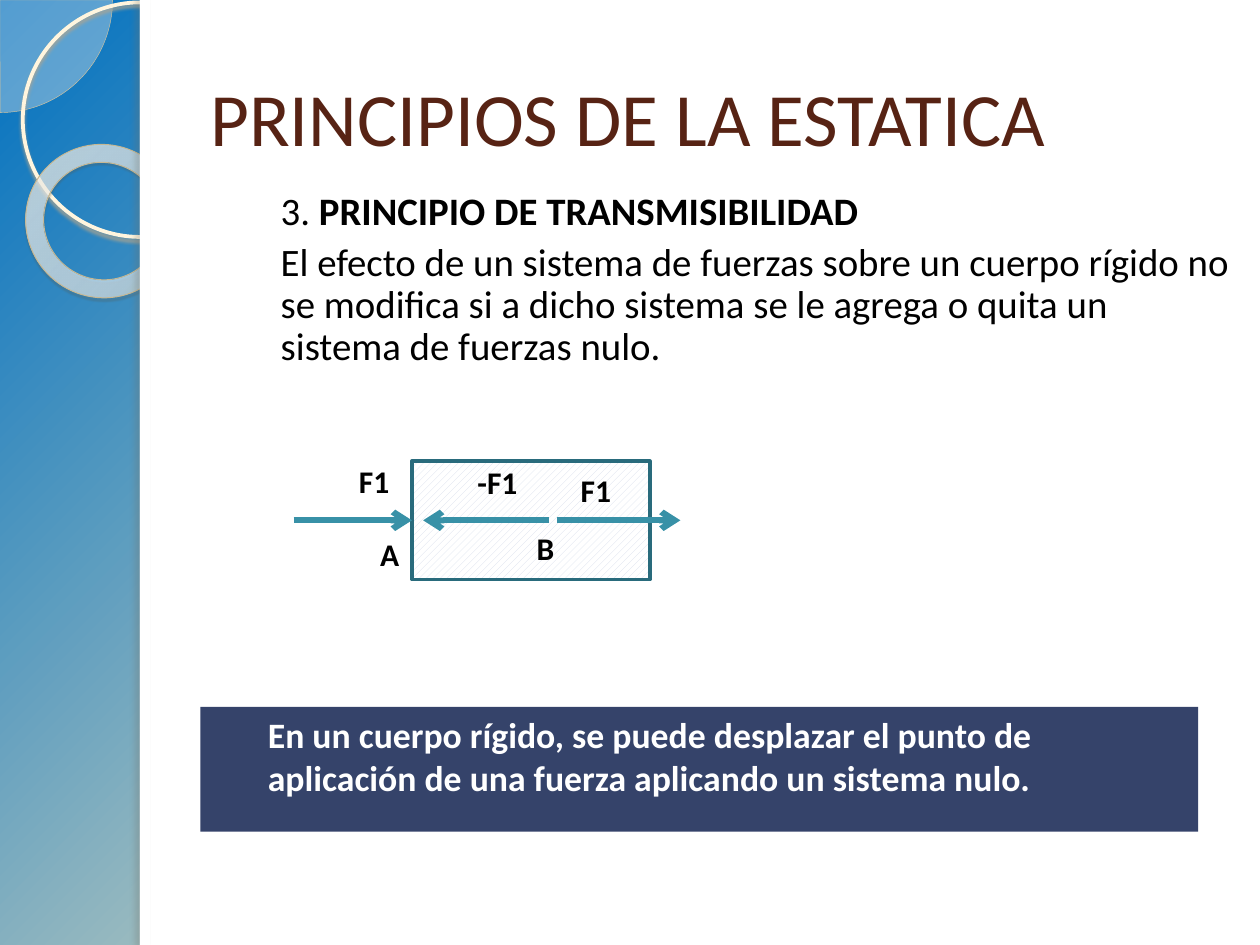
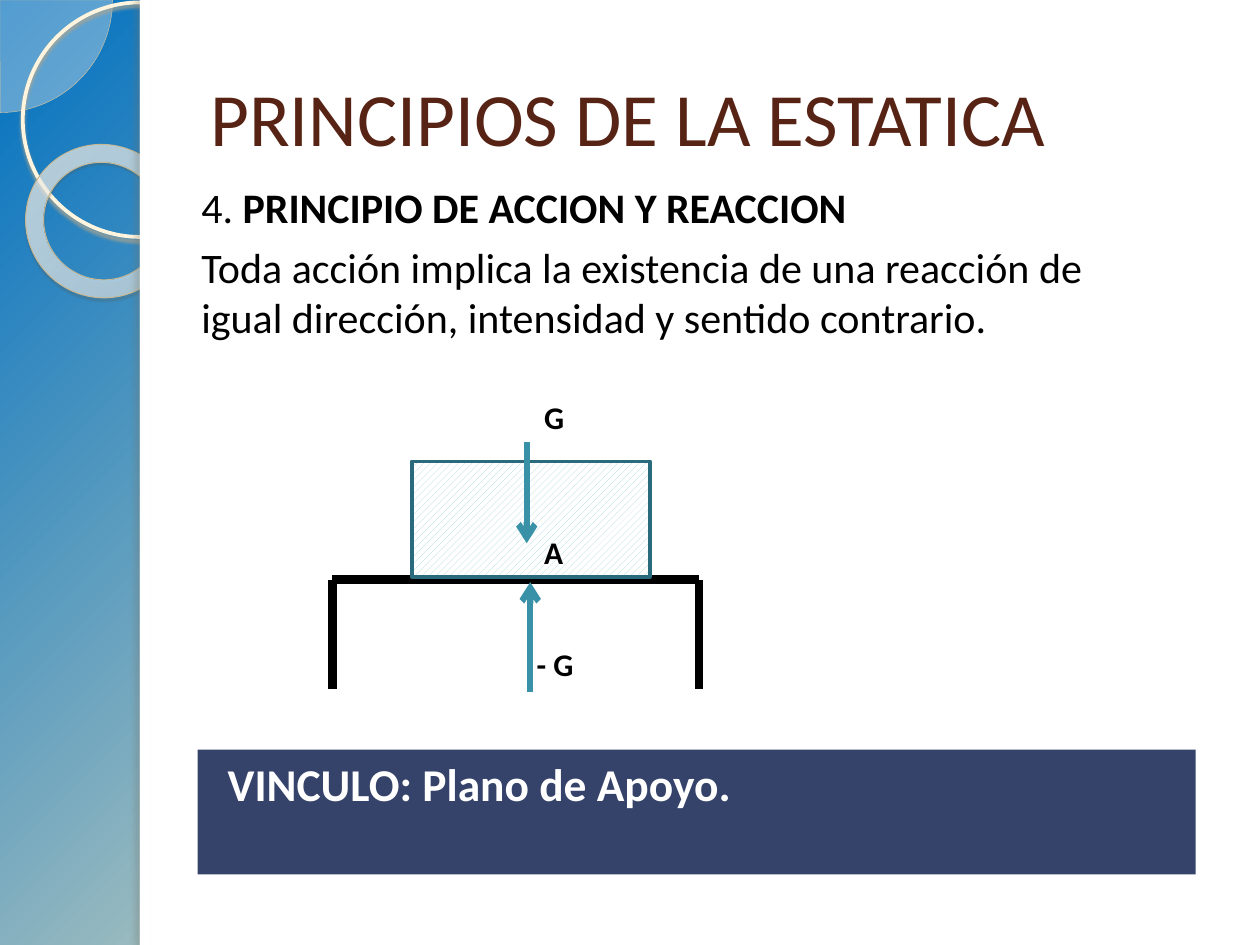
from dataclasses import dataclass

import pptx
import pptx.dml.color
import pptx.enum.dml
import pptx.enum.shapes
import pptx.enum.text
import pptx.oxml
import pptx.oxml.ns
import pptx.util
from lxml import etree

Pt = pptx.util.Pt
RGBColor = pptx.dml.color.RGBColor
PRESET = pptx.enum.shapes.MSO_SHAPE
ANCHOR = pptx.enum.text.MSO_ANCHOR
qn = pptx.oxml.ns.qn

FONT = "Calibri"
BLACK = RGBColor(0x00, 0x00, 0x00)
WHITE = RGBColor(0xFF, 0xFF, 0xFF)
TITLE_BROWN = RGBColor(0x57, 0x23, 0x14)
BANNER_NAVY = RGBColor(0x35, 0x43, 0x6A)
FORCE_TEAL = RGBColor(0x38, 0x91, 0xA7)
BLOCK_EDGE = RGBColor(0x29, 0x6B, 0x7C)
HATCH_GREY = RGBColor(0xD7, 0xDD, 0xEB)
HATCH_TEAL = RGBColor(0xA9, 0xD7, 0xE2)
PIE_CREAM = RGBColor(0xFE, 0xFA, 0xF4)
PIE_EDGE = RGBColor(0xD3, 0xC3, 0x9F)
RING_CREAM = RGBColor(0xFF, 0xF5, 0xDE)
RING_SHADOW = RGBColor(0xB0, 0xA6, 0x8F)
DONUT_EDGE = RGBColor(0xC7, 0xB8, 0x93)
DONUT_SHADOW = RGBColor(0x5A, 0x54, 0x44)
PANEL_SHADOW = RGBColor(0x73, 0x6F, 0x63)
# Gradient stops: position %, colour, opacity %
SKY_STOPS = [(0, RGBColor(0x00, 0x70, 0xC0), 100),
             (82, RGBColor(0xFF, 0xEB, 0xBE), 100),
             (100, RGBColor(0xC9, 0xB4, 0x84), 100)]
DONUT_STOPS = [(0, RGBColor(0xFF, 0xFC, 0xF6), 70),
               (70, RGBColor(0xFF, 0xFE, 0xFB), 55),
               (100, RGBColor(0xF0, 0xD2, 0x8E), 60)]

SLIDE_WIDTH, SLIDE_HEIGHT = 720, 540
PANEL_LEFT = 80
LIST_INDENT = 31.5


@dataclass
class Box:
    left: float
    top: float
    width: float
    height: float

    def inner(self, left, top, width, height):
        return Box(self.left + left, self.top + top, width, height)

    def lengths(self):
        return Pt(self.left), Pt(self.top), Pt(self.width), Pt(self.height)


def add_color(parent, color, opacity=100):
    node = etree.SubElement(parent, qn("a:srgbClr"), val=str(color))
    if opacity < 100:
        etree.SubElement(node, qn("a:alpha"), val=str(opacity * 1000))


def fill_radial(fill, owner, stops, focus):
    """Give the owner element a circular gradient around the focus rectangle (%)."""
    fill.gradient()
    gradient = next(owner.iter(qn("a:gradFill")))
    gradient.clear()
    gradient.set("rotWithShape", "1")
    stop_list = etree.SubElement(gradient, qn("a:gsLst"))
    for position, color, opacity in stops:
        stop = etree.SubElement(stop_list, qn("a:gs"), pos=str(position * 1000))
        add_color(stop, color, opacity)
    circle = etree.SubElement(gradient, qn("a:path"), attrib={"path": "circle"})
    edges = {side: str(value * 1000) for side, value in zip("ltrb", focus)}
    etree.SubElement(circle, qn("a:fillToRect"), attrib=edges)


def add_shadow(shape, color, opacity, blur, distance, angle):
    effects = shape.element.spPr.find(qn("a:effectLst"))
    shadow = etree.SubElement(
        effects, qn("a:outerShdw"), blurRad=str(Pt(blur)), dist=str(Pt(distance)),
        dir=str(angle * 60000), algn="tl", rotWithShape="0")
    add_color(shadow, color, opacity)


def add_plain_shape(page, preset, box, fill=None, edge=None, edge_width=1):
    shape = page.shapes.add_shape(preset, *box.lengths())
    shape.shadow.inherit = False
    if fill is None:
        shape.fill.background()
    else:
        shape.fill.solid()
        shape.fill.fore_color.rgb = fill
    if edge is None:
        shape.line.fill.background()
    else:
        shape.line.color.rgb = edge
        shape.line.width = Pt(edge_width)
    return shape


def style_runs(para, size, color, bold=None):
    for span in para.runs:
        span.font.name = FONT
        span.font.size = Pt(size)
        span.font.color.rgb = color
        if bold is not None:
            span.font.bold = bold


def indent(para, left):
    """Set a left margin with no bullet and no hanging indent."""
    properties = para._p.get_or_add_pPr()
    properties.set("marL", str(Pt(left)))
    properties.set("indent", "0")
    etree.SubElement(properties, qn("a:buNone"))


def move_placeholder(holder, box):
    holder.left, holder.top, holder.width, holder.height = box.lengths()
    holder.text_frame.auto_size = pptx.enum.text.MSO_AUTO_SIZE.NONE
    holder.text_frame.word_wrap = True


def decorate_master(deck, page):
    """Draw the left band on the page, then move it behind everything on the master."""
    master = deck.slide_master
    fill_radial(master.background.fill, master.element, SKY_STOPS, (-24, -20, 124, 120))

    pie = add_plain_shape(page, PRESET.PIE, Box(-64.3, -64.3, 128.6, 128.6),
                          PIE_CREAM, PIE_EDGE, 0.25)
    pie.adjustments[0], pie.adjustments[1] = 0, 54
    pie_color = next(pie.element.spPr.iter(qn("a:srgbClr")))
    etree.SubElement(pie_color, qn("a:alpha"), val="33000")

    ring = add_plain_shape(page, PRESET.OVAL, Box(13, 1.4, 134, 134),
                           edge=RING_CREAM, edge_width=2.15)
    add_shadow(ring, RING_SHADOW, 85, 2, 2, 90)

    donut = add_plain_shape(page, PRESET.DONUT, Box(14.4, 82.8, 88.6, 87.1),
                            edge=DONUT_EDGE, edge_width=0.58)
    donut.adjustments[0] = 0.118
    donut.rotation = 38.6
    fill_radial(donut.fill, donut.element, DONUT_STOPS, (-408, -50, 508, 150))
    add_shadow(donut, DONUT_SHADOW, 35, 1, 1.2, 75)

    panel = add_plain_shape(
        page, PRESET.RECTANGLE,
        Box(PANEL_LEFT, 0, SLIDE_WIDTH - PANEL_LEFT, SLIDE_HEIGHT), WHITE)
    strip = add_plain_shape(page, PRESET.RECTANGLE,
                            Box(PANEL_LEFT, 0, 5.8, SLIDE_HEIGHT), WHITE)
    add_shadow(strip, PANEL_SHADOW, 25, 3, 3, 180)

    for order, shape in enumerate((pie, ring, donut, panel, strip)):
        next(shape.element.iter(qn("p:cNvPr"))).set("id", str(100 + order))
        master.shapes.element.insert(2 + order, shape.element)


def add_title(page):
    title = page.shapes.title
    move_placeholder(title, Box(113, 21.6, 590.4, 90))
    title.text_frame.vertical_anchor = ANCHOR.MIDDLE
    para = title.text_frame.paragraphs[0]
    para.text = "PRINCIPIOS DE LA ESTATICA"
    para.alignment = pptx.enum.text.PP_ALIGN.LEFT
    style_runs(para, 43, TITLE_BROWN)


def add_principle(page, box, number, name, statement, size, line_spacing):
    body = page.placeholders[1]
    move_placeholder(body, box)
    frame = body.text_frame
    frame.text = number
    heading = frame.paragraphs[0]
    heading.add_run().text = name
    explanation = frame.add_paragraph()
    explanation.text = statement
    for para, space in ((heading, 0), (explanation, 5.5)):
        para.level = 1
        para.line_spacing = line_spacing
        para.space_before = Pt(space)
        indent(para, LIST_INDENT)
        style_runs(para, size, BLACK)
    heading.runs[1].font.bold = True


def add_banner(page, box, text, size, left_indent):
    banner = add_plain_shape(page, PRESET.RECTANGLE, box, BANNER_NAVY)
    frame = banner.text_frame
    frame.word_wrap = True
    frame.vertical_anchor = ANCHOR.TOP
    para = frame.paragraphs[0]
    para.text = text
    para.alignment = pptx.enum.text.PP_ALIGN.LEFT
    indent(para, left_indent)
    style_runs(para, size, WHITE, True)


def add_block(page, box, hatch):
    block = add_plain_shape(page, PRESET.RECTANGLE, box, edge=BLOCK_EDGE, edge_width=2)
    block.fill.patterned()
    block.fill.pattern = pptx.enum.dml.MSO_PATTERN.WIDE_UPWARD_DIAGONAL
    block.fill.fore_color.rgb = hatch
    block.fill.back_color.rgb = WHITE
    return block


def add_line(shapes, box, start, end, color, width):
    """Draw a line between two points given relative to the box."""
    line = shapes.add_connector(
        pptx.enum.shapes.MSO_CONNECTOR.STRAIGHT,
        Pt(box.left + start[0]), Pt(box.top + start[1]),
        Pt(box.left + end[0]), Pt(box.top + end[1]))
    line.line.color.rgb = color
    line.line.width = Pt(width)
    etree.SubElement(line.element.spPr, qn("a:effectLst"))
    return line


def add_force(page, box, start, end):
    force = add_line(page.shapes, box, start, end, FORCE_TEAL, 3.5)
    etree.SubElement(force.line._get_or_add_ln(), qn("a:tailEnd"), type="arrow")
    return force


def add_labels(page, box, labels):
    for text, left, top in labels:
        label = page.shapes.add_textbox(*box.inner(left, top, 49.7, 28.8).lengths())
        label.text_frame.word_wrap = True
        para = label.text_frame.paragraphs[0]
        para.text = text
        style_runs(para, 18, BLACK, True)


def add_sliding_force_diagram(page, box):
    block = add_block(page, box.inner(67.6, 2.9, 136, 67.7), HATCH_GREY)
    axis = 36.75
    applied = add_force(page, box, (0, axis), (67.6, axis))
    applied.end_connect(block, 1)
    add_force(page, box, (150.4, axis), (box.width, axis))
    add_force(page, box, (146, axis), (74, axis))
    add_labels(page, box, [("F1", 30.2, 0), ("A", 42.4, 41.8), ("F1", 156.9, 5),
                           ("-F1", 97.9, 0.7), ("B", 131.7, 38.2)])


def add_support_diagram(page, box):
    table_top, leg_height = 107.3, 62.6
    table = page.shapes.add_group_shape()
    add_line(table.shapes, box, (0, table_top), (box.width, table_top), BLACK, 5)
    for leg in (0, box.width):
        add_line(table.shapes, box, (leg, table_top), (leg, table_top + leg_height), BLACK, 5)
    add_force(page, box, (113, box.height), (113, 108.7))
    add_block(page, box.inner(45.4, 39.6, 136, 66.2), HATCH_TEAL)
    add_force(page, box, (111, 28.8), (111, 86.4))
    add_labels(page, box, [("G", 113.8, 0), ("A", 113.8, 77), ("- G", 109.5, 141)])


def build_transmissibility(page):
    add_title(page)
    add_principle(
        page, Box(121.7, 105.8, 590.4, 113), "3. ", "PRINCIPIO DE TRANSMISIBILIDAD",
        "El efecto de un sistema de fuerzas sobre un cuerpo rígido no se modifica si a "
        "dicho sistema se le agrega o quita un sistema de fuerzas nulo.", 22.2, 0.9)
    add_sliding_force_diagram(page, Box(167.8, 260.6, 221, 70.6))
    add_banner(
        page, Box(114.5, 404, 570.2, 71.3),
        "En un cuerpo rígido, se puede desplazar el punto de aplicación de una fuerza "
        "aplicando un sistema nulo.", 20.4, LIST_INDENT)


def build_action_reaction(page):
    add_title(page)
    add_principle(
        page, Box(76.3, 100, 590.4, 113), "4. ", "PRINCIPIO DE ACCION Y REACCION",
        "Toda acción implica la existencia de una reacción de igual dirección, "
        "intensidad y sentido contrario.", 24, 1.0)
    add_support_diagram(page, Box(190, 224, 209.5, 171.4))
    add_banner(page, Box(113, 428.4, 570.2, 71.3), "VINCULO: Plano de Apoyo.", 26, 10)


def main():
    deck = pptx.Presentation()
    deck.slide_width, deck.slide_height = Pt(SLIDE_WIDTH), Pt(SLIDE_HEIGHT)
    layout = deck.slide_layouts[1]
    pages = [deck.slides.add_slide(layout) for _ in range(2)]
    decorate_master(deck, pages[0])
    build_transmissibility(pages[0])
    build_action_reaction(pages[1])
    deck.save("out.pptx")


if __name__ == "__main__":
    main()
